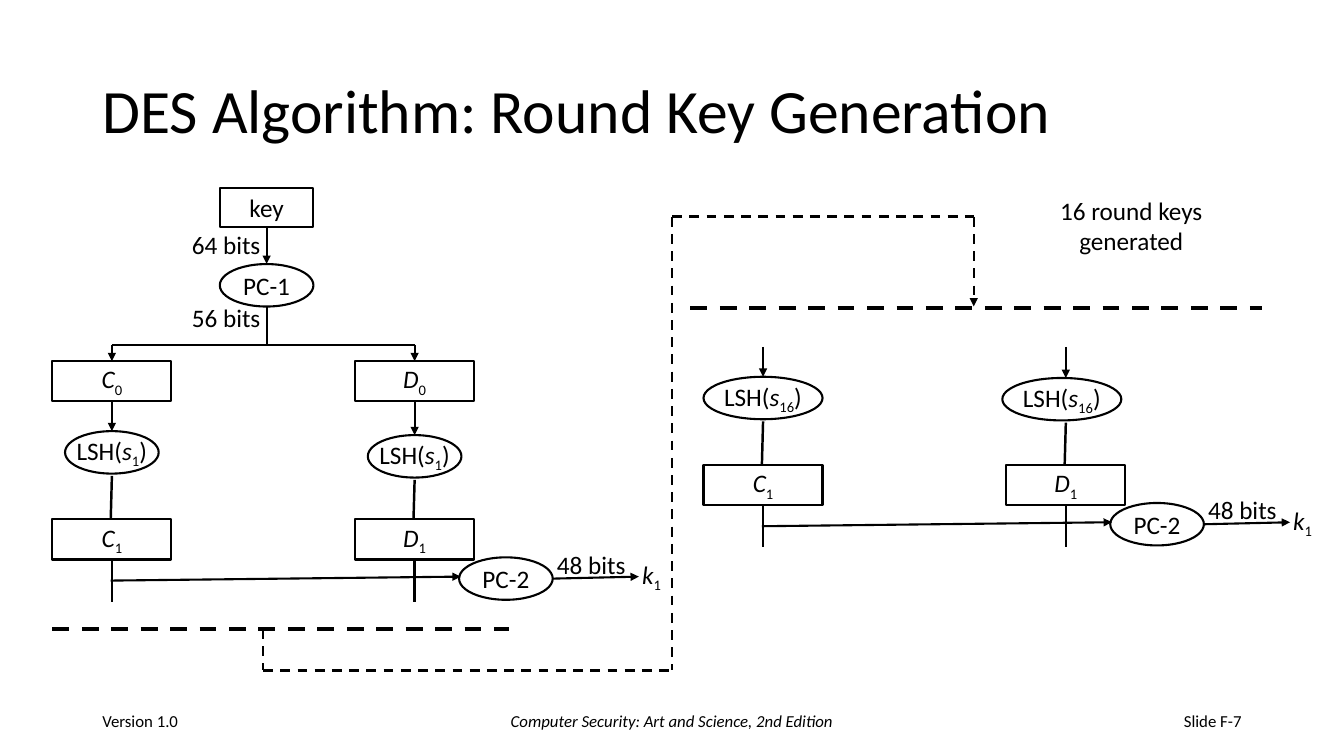
import pptx
import pptx.util
import pptx.dml.color
import pptx.enum.dml
import pptx.enum.shapes
import pptx.enum.text
import pptx.oxml.ns
import lxml.etree

Cm, Pt = pptx.util.Cm, pptx.util.Pt
SHAPE = pptx.enum.shapes.MSO_SHAPE
ALIGN = pptx.enum.text.PP_ALIGN
INK, FONT = "000000", "Calibri"

TITLE = "DES Algorithm: Round Key Generation"
# text, left, width, alignment, style
FOOTERS = [
    ("Version 1.0", 2.33, 7.62, ALIGN.LEFT, ""),
    ("Computer Security: Art and Science, 2nd Edition", 11.22, 11.43, ALIGN.CENTER, "italic"),
    ("Slide F-7", 23.92, 7.62, ALIGN.RIGHT, ""),
]
# Where each round stands, and how far its right-hand shift sits off the grid
ROUNDS = [
    {"number": "1", "dx": 0, "dy": 0, "shift_width": 2.36, "nudge": (0, 0.1)},
    {"number": "16", "dx": 16.41, "dy": -1.37, "shift_width": 3, "nudge": (-0.1, 0.03)},
]
HALVES = [("C", 2.82), ("D", 10.45)]
KEY_X, SPLIT_Y = 6.72, 8.69
REGISTER, OVAL, BITS = (3, 1.02), (2.36, 1.07), (2.26, 1.02)
THIN, MEDIUM, THICK = 1.5, 1.75, 3

# x1, y1, x2, y2, width, arrow
DASHED = [
    (1.32, 15.85, 12.83, 15.85, THICK, False),
    (6.63, 15.85, 6.63, 16.89, MEDIUM, False),
    (6.63, 16.89, 16.94, 16.89, MEDIUM, False),
    (16.94, 5.46, 16.94, 16.89, MEDIUM, False),
    (16.94, 5.46, 24.54, 5.46, MEDIUM, False),
    (17.4, 7.77, 31.8, 7.77, THICK, False),
    (24.54, 5.46, 24.54, 7.72, MEDIUM, True),
]


def rgb(value):
    return pptx.dml.color.RGBColor.from_string(value)


def plain(text):
    return [(text, "")]


def indexed(letter, index):
    return [(letter, "italic"), (index, "sub")]


def write(frame, paragraphs, size=18, align=ALIGN.CENTER, wrap=False):
    """Fill a text frame; each paragraph is a list of (text, style) runs."""
    frame.word_wrap = wrap
    frame.vertical_anchor = pptx.enum.text.MSO_ANCHOR.MIDDLE
    for number, runs in enumerate(paragraphs):
        paragraph = frame.add_paragraph() if number else frame.paragraphs[0]
        paragraph.alignment = align
        for text, style in runs:
            run = paragraph.add_run()
            run.text = text
            run.font.name, run.font.size = FONT, Pt(size)
            run.font.color.rgb = rgb(INK)
            run.font.italic = style == "italic"
            if style == "sub":
                run._r.get_or_add_rPr().set("baseline", "-25000")


def centred(x, y, size):
    width, height = size
    return Cm(x - width / 2), Cm(y - height / 2), Cm(width), Cm(height)


def node(slide, kind, x, y, size, runs):
    shape = slide.shapes.add_shape(kind, *centred(x, y, size))
    shape.shadow.inherit = False
    shape.fill.background()
    shape.line.color.rgb = rgb(INK)
    shape.line.width = Pt(THIN)
    write(shape.text_frame, [runs])


def label(slide, x, y, size, *paragraphs):
    write(slide.shapes.add_textbox(*centred(x, y, size)).text_frame, paragraphs)


def link(slide, x1, y1, x2, y2, width=THIN, arrow=False, dashed=False):
    line = slide.shapes.add_connector(
        pptx.enum.shapes.MSO_CONNECTOR.STRAIGHT, Cm(x1), Cm(y1), Cm(x2), Cm(y2))
    line.line.color.rgb = rgb(INK)
    line.line.width = Pt(width)
    if dashed:
        line.line.dash_style = pptx.enum.dml.MSO_LINE.DASH
    properties = line._element.spPr
    if arrow:
        outline = properties.find(pptx.oxml.ns.qn("a:ln"))
        lxml.etree.SubElement(outline, pptx.oxml.ns.qn("a:tailEnd"), type="triangle")
    lxml.etree.SubElement(properties, pptx.oxml.ns.qn("a:effectLst"))


def draw_key_split(slide):
    """Key, first permutation and the two starting registers."""
    node(slide, SHAPE.RECTANGLE, KEY_X, 5.23, (2.36, 0.97), plain("key"))
    node(slide, SHAPE.OVAL, KEY_X, 7.19, OVAL, plain("PC-1"))
    link(slide, KEY_X, 5.74, KEY_X, 6.65, arrow=True)
    link(slide, KEY_X, 7.72, KEY_X, SPLIT_Y)
    link(slide, HALVES[0][1], SPLIT_Y, HALVES[1][1], SPLIT_Y)
    label(slide, 5.7, 6.17, BITS, plain("64 bits"))
    label(slide, 5.7, 8, BITS, plain("56 bits"))
    for letter, x in HALVES:
        link(slide, x, SPLIT_Y, x, 9.1, arrow=True)
        node(slide, SHAPE.RECTANGLE, x, 9.6, REGISTER, indexed(letter, "0"))


def draw_round(slide, number, dx, dy, shift_width, nudge):
    """Shift both halves, then permute them into a round key."""
    for (letter, half_x), (off_x, off_y) in zip(HALVES, [(0, 0), nudge]):
        x = half_x + dx
        shift_y = 11.4 + dy + off_y
        link(slide, x, 10.11 + dy, x, shift_y - OVAL[1] / 2, arrow=True)
        node(slide, SHAPE.OVAL, x + off_x, shift_y, (shift_width, OVAL[1]),
             plain("LSH(") + indexed("s", number) + plain(")"))
        link(slide, x, shift_y + 0.59, x - 0.03, 13.1 + dy, MEDIUM)
        node(slide, SHAPE.RECTANGLE, x, 13.59 + dy, REGISTER, indexed(letter, "1"))
        link(slide, x, 14.07 + dy, x, 15.16 + dy, MEDIUM)
    link(slide, 2.79 + dx, 14.63 + dy, 11.61 + dx, 14.53 + dy, arrow=True)
    node(slide, SHAPE.OVAL, 12.75 + dx, 14.58 + dy, OVAL, plain("PC-2"))
    link(slide, 13.94 + dx, 14.58 + dy, 16.1 + dx, 14.53 + dy, arrow=True)
    label(slide, 14.9 + dx, 14.22 + dy, BITS, plain("48 bits"))
    label(slide, 16.42 + dx, 14.53 + dy, (1.02, 1.02), indexed("k", "1"))


def main():
    deck = pptx.Presentation()
    deck.slide_width, deck.slide_height = Cm(33.87), Cm(19.05)
    slide = deck.slides.add_slide(deck.slide_layouts[5])

    title = slide.shapes.title
    title.left, title.top, title.width, title.height = Cm(2.33), Cm(1.02), Cm(29.21), Cm(3.68)
    write(title.text_frame, [plain(TITLE)], 44, ALIGN.LEFT, wrap=True)
    title.text_frame.auto_size = pptx.enum.text.MSO_AUTO_SIZE.NONE
    title.text_frame.paragraphs[0].line_spacing = 0.9

    for text, left, width, align, style in FOOTERS:
        footer = slide.shapes.add_textbox(Cm(left), Cm(17.65), Cm(width), Cm(1.02))
        write(footer.text_frame, [[(text, style)]], 12, align, wrap=True)

    draw_key_split(slide)
    for settings in ROUNDS:
        draw_round(slide, **settings)
    for x1, y1, x2, y2, width, arrow in DASHED:
        link(slide, x1, y1, x2, y2, width, arrow, dashed=True)
    label(slide, 28.51, 5.68, (4.14, 1.8), plain("16 round keys"), plain("generated"))

    deck.save("out.pptx")


if __name__ == "__main__":
    main()
